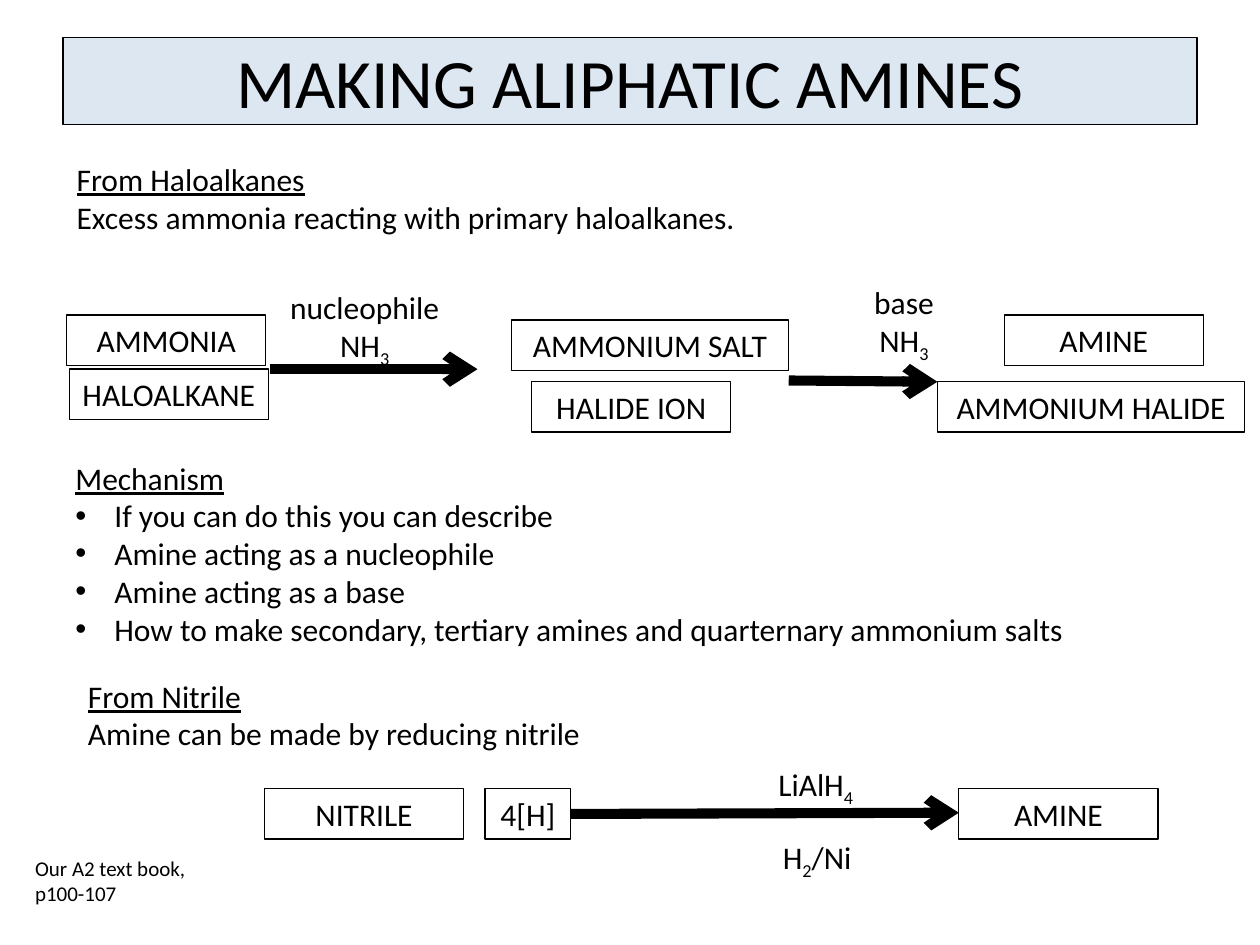
from lxml.etree import SubElement
from pptx import Presentation
from pptx.dml.color import RGBColor
from pptx.enum.shapes import MSO_CONNECTOR, MSO_SHAPE
from pptx.enum.text import MSO_ANCHOR, MSO_AUTO_SIZE, PP_ALIGN
from pptx.oxml.ns import qn
from pptx.util import Inches, Pt

BLACK = "000000"
TITLE_FILL = "4F81BD"
TITLE = "MAKING ALIPHATIC AMINES"
BOX_HEIGHT = 0.4
SPECIES = [
    ("AMMONIA", 0.53, 2.5, 1.58),
    ("HALOALKANE", 0.55, 2.93, 1.58),
    ("AMMONIUM SALT", 4.06, 2.54, 2.2),
    ("HALIDE ION", 4.22, 3.03, 1.58),
    ("AMINE", 7.97, 2.5, 1.58),
    ("AMMONIUM HALIDE", 7.44, 3.03, 2.44),
    ("NITRILE", 2.1, 6.26, 1.58),
    ("4[H]", 3.85, 6.26, 0.68),
    ("AMINE", 7.61, 6.26, 1.58),
]
REACTION_ARROWS = [
    (2.14, 2.93, 3.79, 2.93),
    (6.26, 3.02, 7.44, 3.03),
    (4.53, 6.46, 7.61, 6.45),
]
AMMONIA_FORMULA = [("NH", ""), ("3", "sub")]
REAGENTS = [
    ([[("nucleophile", "")], AMMONIA_FORMULA], 2.11, 2.24, 1.57, 0.71),
    ([[("base", "")], AMMONIA_FORMULA], 6.39, 2.2, 1.57, 0.71),
    ([[("LiAlH", ""), ("4", "sub")]], 5.81, 6.02, 1.33, 0.4),
    ([[("H", ""), ("2", "sub"), ("/Ni", "")]], 5.63, 6.6, 1.71, 0.4),
]
SECTIONS = [
    ("From Haloalkanes", ["Excess ammonia reacting with primary haloalkanes."],
     False, 0.51, 1.22, 5.5, 0.71),
    ("Mechanism", ["If you can do this you can describe",
                   "Amine acting as a nucleophile",
                   "Amine acting as a base",
                   "How to make secondary, tertiary amines and quarternary ammonium salts"],
     True, 0.5, 3.59, 9.03, 1.62),
    ("From Nitrile", ["Amine can be made by reducing nitrile"],
     False, 0.6, 5.32, 5.5, 0.71),
]
REFERENCE = ("Our A2 text book, p100-107", 0.18, 6.74, 1.59, 0.5)


def colour(value):
    return RGBColor.from_string(value)


def add_run(paragraph, text, style="", size=18):
    run = paragraph.add_run()
    run.text = text
    run.font.name = "Calibri"
    run.font.size = Pt(size)
    run.font.color.rgb = colour(BLACK)
    if style == "underline":
        run.font.underline = True
    if style == "sub":
        run.font._element.set("baseline", "-25000")


def write(frame, lines, align=PP_ALIGN.LEFT, size=18):
    frame.word_wrap = True
    for index, line in enumerate(lines):
        paragraph = frame.add_paragraph() if index else frame.paragraphs[0]
        paragraph.alignment = align
        for text, style in line:
            add_run(paragraph, text, style, size)


def add_bullet(paragraph):
    properties = paragraph._p.get_or_add_pPr()
    properties.set("marL", str(Inches(0.31)))
    properties.set("indent", str(-Inches(0.31)))
    SubElement(properties, qn("a:buFont"), typeface="Arial")
    SubElement(properties, qn("a:buChar"), char="•")


def add_text(slide, lines, place, align=PP_ALIGN.LEFT, size=18):
    frame = slide.shapes.add_textbox(*map(Inches, place)).text_frame
    write(frame, lines, align, size)
    return frame


def outline(shape):
    shape.line.color.rgb = colour(BLACK)
    shape.line.width = Pt(0.75)


def add_title(slide):
    title = slide.shapes.title
    title.left, title.top, title.width, title.height = map(Inches, (0.5, 0.3, 9, 0.69))
    title.fill.solid()
    title.fill.fore_color.rgb = colour(TITLE_FILL)
    fill_colour = title._element.spPr.find(".//" + qn("a:srgbClr"))
    SubElement(fill_colour, qn("a:alpha"), val="19000")
    outline(title)
    title.text_frame.auto_size = MSO_AUTO_SIZE.NONE
    title.text_frame.vertical_anchor = MSO_ANCHOR.MIDDLE
    write(title.text_frame, [[(TITLE, "")]], PP_ALIGN.CENTER, 39.6)


def add_species(slide, label, left, top, width):
    box = slide.shapes.add_shape(
        MSO_SHAPE.RECTANGLE, *map(Inches, (left, top, width, BOX_HEIGHT)))
    box.shadow.inherit = False
    box.fill.background()
    outline(box)
    box.text_frame.vertical_anchor = MSO_ANCHOR.TOP
    write(box.text_frame, [[(label, "")]], PP_ALIGN.CENTER)


def add_arrow(slide, ends):
    arrow = slide.shapes.add_connector(MSO_CONNECTOR.STRAIGHT, *map(Inches, ends))
    arrow.line.color.rgb = colour(BLACK)
    arrow.line.width = Pt(5.75)
    SubElement(arrow.line._get_or_add_ln(), qn("a:tailEnd"), type="arrow")
    SubElement(arrow._element.spPr, qn("a:effectLst"))


def main():
    deck = Presentation()
    deck.slide_width, deck.slide_height = Inches(10), Inches(7.5)
    slide = deck.slides.add_slide(deck.slide_layouts[5])
    add_title(slide)
    for heading, points, bulleted, *place in SECTIONS:
        lines = [[(heading, "underline")]] + [[(point, "")] for point in points]
        section = add_text(slide, lines, place)
        if bulleted:
            for paragraph in section.paragraphs[1:]:
                add_bullet(paragraph)
    for species in SPECIES:
        add_species(slide, *species)
    for ends in REACTION_ARROWS:
        add_arrow(slide, ends)
    for lines, *place in REAGENTS:
        add_text(slide, lines, place, PP_ALIGN.CENTER)
    citation, *place = REFERENCE
    add_text(slide, [[(citation, "")]], place, size=12)
    deck.save("out.pptx")


if __name__ == "__main__":
    main()
